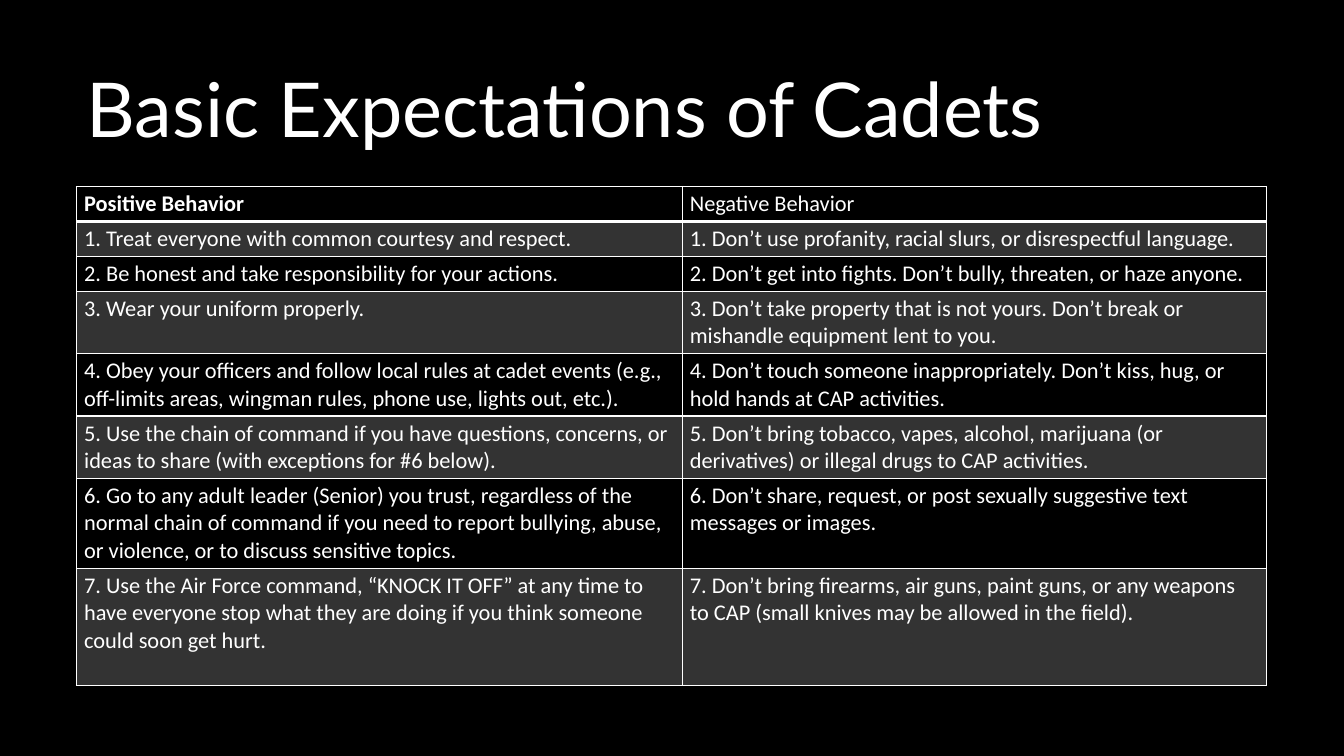
from lxml import etree
from pptx import Presentation
from pptx import util as u
from pptx.dml import color
from pptx.enum import text
from pptx.oxml import ns

COLORS = {"background": "000000", "ink": "FFFFFF"}
BEHAVIORS = [
    ("Positive Behavior", "Negative Behavior"),
    ("1. Treat everyone with common courtesy and respect.",
     "1. Don’t use profanity, racial slurs, or disrespectful language."),
    ("2. Be honest and take responsibility for your actions.",
     "2. Don’t get into fights. Don’t bully, threaten, or haze anyone."),
    ("3. Wear your uniform properly.",
     "3. Don’t take property that is not yours. Don’t break or mishandle equipment lent to you."),
    ("4. Obey your officers and follow local rules at cadet events (e.g., off-limits areas, "
     "wingman rules, phone use, lights out, etc.).",
     "4. Don’t touch someone inappropriately. Don’t kiss, hug, or hold hands at CAP activities."),
    ("5. Use the chain of command if you have questions, concerns, or ideas to share "
     "(with exceptions for #6 below).",
     "5. Don’t bring tobacco, vapes, alcohol, marijuana (or derivatives) or illegal drugs "
     "to CAP activities."),
    ("6. Go to any adult leader (Senior) you trust, regardless of the normal chain of command "
     "if you need to report bullying, abuse, or violence, or to discuss sensitive topics.",
     "6. Don’t share, request, or post sexually suggestive text messages or images."),
    ("7. Use the Air Force command, “KNOCK IT OFF” at any time to have everyone stop what they "
     "are doing if you think someone could soon get hurt.",
     "7. Don’t bring firearms, air guns, paint guns, or any weapons to CAP "
     "(small knives may be allowed in the field)."),
]
COLUMN_WIDTHS = [432.7, 417.3]
ROW_HEIGHTS = [25, 25, 25, 44.3, 44.3, 44.3, 64, 83.6]
CELL_FORMAT = {"margin_left": u.Pt(5.4), "margin_right": u.Pt(5.4),
               "margin_top": u.Pt(2.7), "margin_bottom": u.Pt(2.7)}


def format_text(para, **font_values):
    for name, value in font_values.items():
        setattr(para.font, name, value)
    para.font.color.rgb = color.RGBColor.from_string(COLORS["ink"])


def add_border(cell, side, width):
    line = etree.SubElement(cell._tc.get_or_add_tcPr(), ns.qn(f"a:ln{side}"), w=str(u.Pt(width)))
    fill = etree.SubElement(line, ns.qn("a:solidFill"))
    etree.SubElement(fill, ns.qn("a:srgbClr"), val=COLORS["ink"])


# Page
deck = Presentation()
deck.slide_width, deck.slide_height = u.Pt(960), u.Pt(540)
page = deck.slides.add_slide(deck.slide_layouts[5])
page.background.fill.solid()
page.background.fill.fore_color.rgb = color.RGBColor.from_string(COLORS["background"])

# Title
title = page.shapes.title
title_place = {"left": 54.7, "top": 28.8, "width": 828, "height": 104.4}
for name, value in title_place.items():
    setattr(title, name, u.Pt(value))
title.text_frame.text = "Basic Expectations of Cadets"
title.text_frame.vertical_anchor = text.MSO_ANCHOR.MIDDLE
title_para = title.text_frame.paragraphs[0]
title_para.alignment = text.PP_ALIGN.LEFT
title_para.line_spacing = 0.9
format_text(title_para, name="Lato", size=u.Pt(54))

# Table of behaviors
table = page.shapes.add_table(
    len(BEHAVIORS), 2, u.Pt(54.7), u.Pt(133.2),
    u.Pt(sum(COLUMN_WIDTHS)), u.Pt(sum(ROW_HEIGHTS))).table
table.first_row = table.horz_banding = False
for column, width in zip(table.columns, COLUMN_WIDTHS):
    column.width = u.Pt(width)

for row_number, (height, behaviors) in enumerate(zip(ROW_HEIGHTS, BEHAVIORS)):
    table.rows[row_number].height = u.Pt(height)
    for column_number, behavior in enumerate(behaviors):
        cell = table.cell(row_number, column_number)
        cell.text = behavior
        for name, value in CELL_FORMAT.items():
            setattr(cell, name, value)
        format_text(cell.text_frame.paragraphs[0], name="Calibri", size=u.Pt(16),
                    bold=row_number == column_number == 0)

        # The rule under the header is thicker
        for side in "LRTB":
            under_header = (row_number, side) in [(0, "B"), (1, "T")]
            add_border(cell, side, 2 if under_header else 1)

        # Odd rows carry a translucent band
        if row_number % 2:
            cell.fill.solid()
            cell.fill.fore_color.rgb = color.RGBColor.from_string(COLORS["ink"])
            tint = cell._tc.tcPr.find(ns.qn("a:solidFill"))[0]
            etree.SubElement(tint, ns.qn("a:alpha"), val="20000")
        else:
            cell.fill.background()

deck.save("out.pptx")
